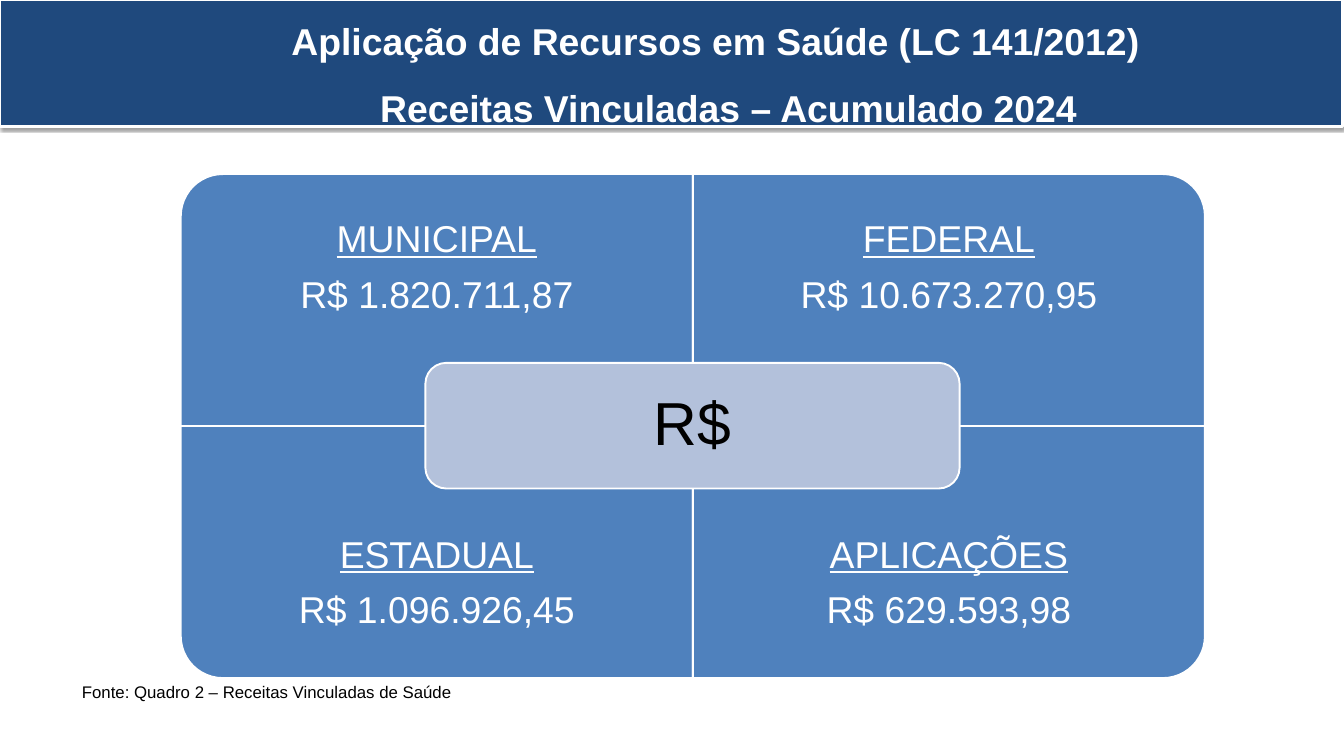
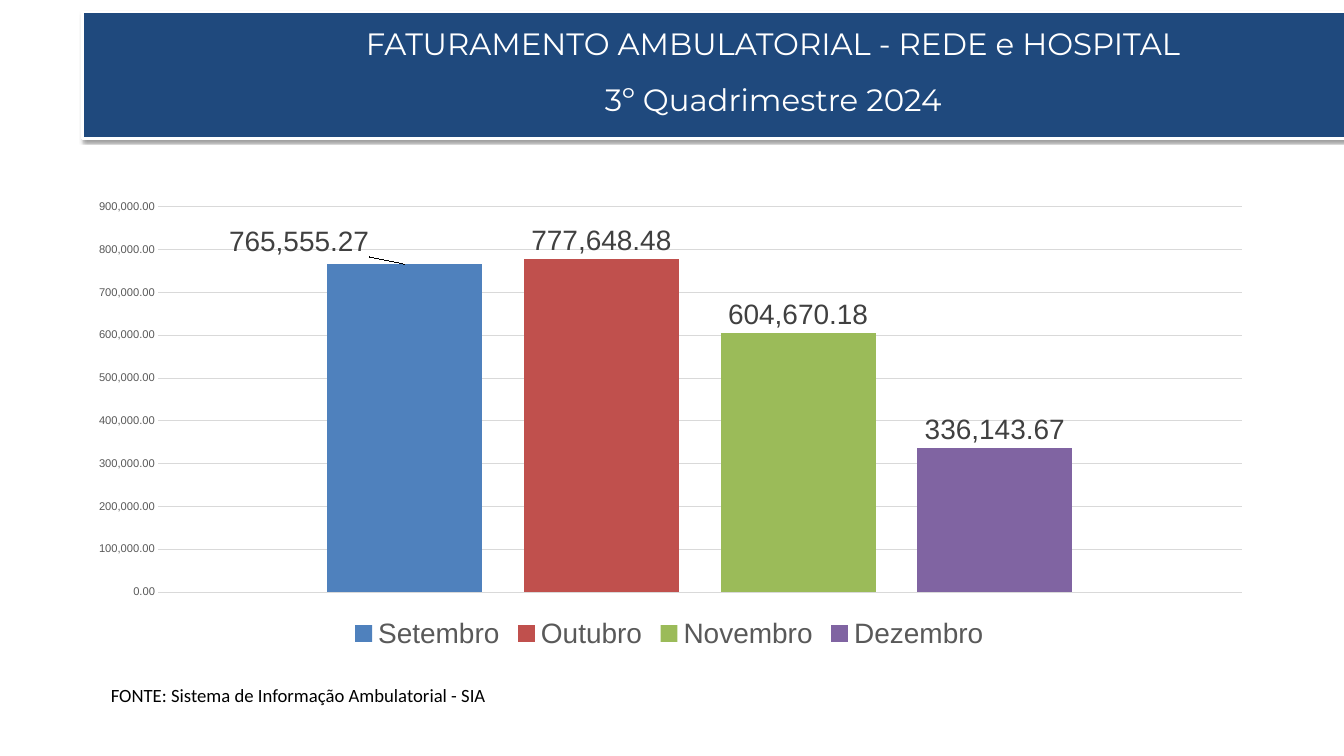
from lxml import etree
from pptx import Presentation
from pptx.chart.data import CategoryChartData
from pptx.dml.color import RGBColor
from pptx.enum.chart import XL_CHART_TYPE, XL_LABEL_POSITION, XL_LEGEND_POSITION, XL_TICK_MARK
from pptx.enum.shapes import MSO_SHAPE as SHAPE
from pptx.enum.text import MSO_ANCHOR as ANCHOR, PP_ALIGN as ALIGN
from pptx.oxml import parse_xml
from pptx.oxml.ns import nsdecls, qn
from pptx.util import Inches, Pt

NAVY = RGBColor(0x1F, 0x49, 0x7D)
BLUE = RGBColor(0x4F, 0x81, 0xBD)
RED = RGBColor(0xC0, 0x50, 0x4D)
GREEN = RGBColor(0x9B, 0xBB, 0x59)
PURPLE = RGBColor(0x80, 0x64, 0xA2)
PALE_BLUE = RGBColor(0xB3, 0xC1, 0xDB)
WHITE = RGBColor(0xFF, 0xFF, 0xFF)
BLACK = RGBColor(0x00, 0x00, 0x00)
DARK_GRAY = RGBColor(0x40, 0x40, 0x40)
GRAY = RGBColor(0x59, 0x59, 0x59)
LIGHT_GRAY = RGBColor(0xD9, 0xD9, 0xD9)

NUMBER_FORMAT = "#,##0.00"
BAND_SHADOW = (
    f'<a:effectLst {nsdecls("a")}>'
    '<a:outerShdw blurRad="39400" dist="20300" dir="5400000" rotWithShape="0">'
    '<a:srgbClr val="000000"><a:alpha val="38000"/></a:srgbClr>'
    "</a:outerShdw></a:effectLst>"
)


def add_panel(shapes, kind, area, fill, line_width):
    """Filled shape with a white outline; area is left, top, width, height."""
    panel = shapes.add_shape(kind, *[Inches(length) for length in area])
    panel.shadow.inherit = False
    panel.fill.solid()
    panel.fill.fore_color.rgb = fill
    panel.line.color.rgb = WHITE
    panel.line.width = Pt(line_width)
    return panel


def add_text(shapes, area, lines, font, size, color, align=ALIGN.LEFT,
             anchor=ANCHOR.TOP, margin=None, spacing=1.0, after=0):
    """Text box with one paragraph per line."""
    box = shapes.add_textbox(*[Inches(length) for length in area])
    frame = box.text_frame
    frame.word_wrap = True
    frame.vertical_anchor = anchor
    if margin:
        frame.margin_left = frame.margin_right = Inches(margin)
        frame.margin_top = frame.margin_bottom = Inches(margin)
    frame.text = "\n".join(lines)
    for para in frame.paragraphs:
        para.alignment = align
        para.line_spacing = spacing
        para.space_after = Pt(after)
        para.font.name = font
        para.font.size = Pt(size)
        para.font.color.rgb = color
    return frame.paragraphs


deck = Presentation()
deck.slide_width = Inches(20)
deck.slide_height = Inches(11.25)

# Slides with the shared title band
pages = []
for band_left, band_top in [(0, 0), (1.23, 0.18)]:
    page = deck.slides.add_slide(deck.slide_layouts[6])
    band = add_panel(page.shapes, SHAPE.RECTANGLE,
                     (band_left, band_top, 19.98, 1.88), NAVY, 3)
    properties = band._element.spPr
    properties.remove(properties.find(qn("a:effectLst")))
    properties.append(parse_xml(BAND_SHADOW))
    pages.append(page)
revenue_page, billing_page = pages

# Slide 1: title, each line pushed right by an indent
title = add_text(
    revenue_page.shapes, (0, 0, 19.98, 1.88),
    ["Aplicação de Recursos em Saúde (LC 141/2012)",
     "Receitas Vinculadas – Acumulado 2024"],
    "Arial", 40, WHITE, ALIGN.CENTER, ANCHOR.MIDDLE, spacing=1.5)
for para, indent in zip(title, (1.31, 1.7)):
    para.font.bold = True
    para._p.get_or_add_pPr().set("marL", str(Inches(indent)))

# Slide 1: four quadrants, the rounded corner turned outwards
matrix = revenue_page.shapes.add_group_shape().shapes
MATRIX_LEFT, MATRIX_TOP = 2.69, 2.59
WIDE, HIGH, TEXT_HIGH = 7.62, 3.75, 2.81
quadrants = [
    (0, 0, 270, "MUNICIPAL", "R$ 1.820.711,87"),
    (1, 0, 0, "FEDERAL", "R$ 10.673.270,95"),
    (0, 1, 180, "ESTADUAL", "R$ 1.096.926,45"),
    (1, 1, 90, "APLICAÇÕES", "R$ 629.593,98"),
]
for column, row, turn, source, amount in quadrants:
    left = MATRIX_LEFT + column * WIDE
    top = MATRIX_TOP + row * HIGH
    # A quarter turn swaps width and height around the same centre
    width, height = (HIGH, WIDE) if turn % 180 else (WIDE, HIGH)
    area = (left + (WIDE - width) / 2, top + (HIGH - height) / 2, width, height)
    quadrant = add_panel(matrix, SHAPE.ROUND_1_RECTANGLE, area, BLUE, 2)
    quadrant.rotation = turn
    text_top = top + row * (HIGH - TEXT_HIGH)
    heading, _ = add_text(
        matrix, (left, text_top, WIDE, TEXT_HIGH), [source, amount], "Arial", 40,
        WHITE, ALIGN.CENTER, ANCHOR.MIDDLE, margin=0.31, spacing=0.9, after=16)
    heading.runs[0].font.underline = True

# Slide 1: centre label and source
add_panel(matrix, SHAPE.ROUNDED_RECTANGLE, (6.33, 5.4, 7.95, 1.87), PALE_BLUE, 2)
add_text(matrix, (6.42, 5.49, 7.77, 1.69), ["R$"], "Arial", 65, BLACK,
         ALIGN.CENTER, ANCHOR.MIDDLE, margin=0.27, spacing=0.9)
add_text(revenue_page.shapes, (1.12, 10.09, 5.74, 0.4),
         ["Fonte: Quadro 2 – Receitas Vinculadas de Saúde"], "Arial", 18, BLACK)

# Slide 2: title and source
title = add_text(
    billing_page.shapes, (4.75, 0.05, 13.75, 2.32),
    ["FATURAMENTO AMBULATORIAL - REDE e HOSPITAL", "3º Quadrimestre 2024"],
    "Montserrat", 33, WHITE, ALIGN.CENTER, spacing=1.5)
title[0]._p.get_or_add_pPr().set("marR", str(Inches(0.24)))
add_text(billing_page.shapes, (1.55, 10.12, 6.05, 0.44),
         ["FONTE: Sistema de Informação Ambulatorial - SIA"], "Calibri", 20, BLACK)

# Slide 2: monthly billing chart
months = [
    ("Setembro", 765555.27, BLUE),
    ("Outubro", 777648.48, RED),
    ("Novembro", 604670.18, GREEN),
    ("Dezembro", 336143.67, PURPLE),
]
billing = CategoryChartData(number_format=NUMBER_FORMAT)
billing.categories = ["1"]
for month, value, _ in months:
    billing.add_series(month, [value])
chart = billing_page.shapes.add_chart(
    XL_CHART_TYPE.COLUMN_CLUSTERED, Inches(1.23), Inches(2.79),
    Inches(17.46), Inches(6.95), billing).chart
chart.has_title = False
chart.font.name = "Arial"
chart.font.size = Pt(10)
chart.font.color.rgb = BLACK

chart.has_legend = True
chart.legend.position = XL_LEGEND_POSITION.BOTTOM
chart.legend.include_in_layout = False
chart.category_axis.visible = False
axis = chart.value_axis
axis.minimum_scale, axis.maximum_scale, axis.major_unit = 0, 900000, 100000
axis.major_tick_mark = XL_TICK_MARK.NONE
axis.format.line.fill.background()
axis.major_gridlines.format.line.color.rgb = LIGHT_GRAY
axis.major_gridlines.format.line.width = Pt(0.75)
axis.tick_labels.number_format = NUMBER_FORMAT
axis.tick_labels.number_format_is_linked = False

plot = chart.plots[0]
plot.vary_by_categories = False
plot.gap_width = 219
plot.overlap = -27
fonts = [(chart.legend.font, 30, GRAY), (axis.tick_labels.font, 12, GRAY)]
for series, (_, _, color) in zip(plot.series, months):
    series.format.fill.solid()
    series.format.fill.fore_color.rgb = color
    labels = series.data_labels
    labels.show_value = True
    labels.position = XL_LABEL_POSITION.OUTSIDE_END
    labels.number_format = NUMBER_FORMAT
    labels.number_format_is_linked = False
    fonts.append((labels.font, 30, DARK_GRAY))

# The September label sits to the left of its column
september = plot.series[0]
september_label = september.points[0].data_label
september_label.position = XL_LABEL_POSITION.OUTSIDE_END
fonts.append((september_label.font, 30, DARK_GRAY))
for font, size, color in fonts:
    font.name = "Arial"
    font.size = Pt(size)
    font.color.rgb = color
label_xml = september._element.find(".//" + qn("c:dLbl"))
label_xml.insert(1, parse_xml(
    f'<c:layout {nsdecls("c")}><c:manualLayout>'
    '<c:x val="-0.09"/><c:y val="-0.01"/></c:manualLayout></c:layout>'))
label_xml.insert(2, parse_xml(
    f'<c:numFmt {nsdecls("c")} formatCode="{NUMBER_FORMAT}" sourceLinked="0"/>'))

# Fixed inner plot area, as fractions of the chart
plot_area = chart._chartSpace.chart.plotArea
for old_layout in plot_area.findall(qn("c:layout")):
    plot_area.remove(old_layout)
layout = etree.Element(qn("c:layout"))
manual = etree.SubElement(layout, qn("c:manualLayout"))
for tag, value in [("layoutTarget", "inner"), ("xMode", "edge"), ("yMode", "edge"),
                   ("x", "0.064"), ("y", "0.041"), ("w", "0.924"), ("h", "0.825")]:
    etree.SubElement(manual, qn("c:" + tag)).set("val", value)
plot_area.insert(0, layout)

deck.save("out.pptx")
